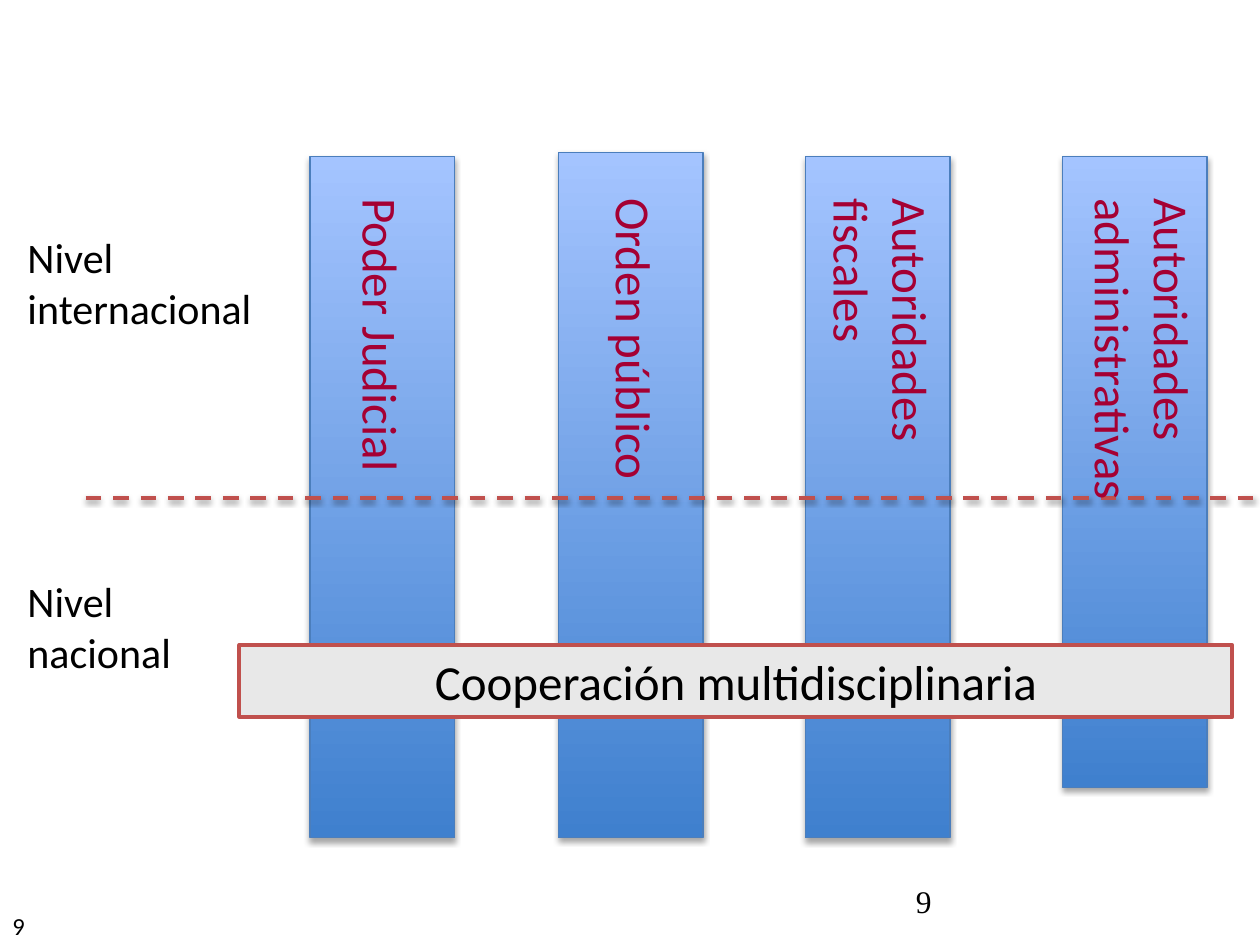
from lxml import etree
from pptx import Presentation
from pptx.dml.color import RGBColor
from pptx.enum.dml import MSO_LINE
from pptx.enum.shapes import MSO_CONNECTOR, MSO_SHAPE
from pptx.enum.text import MSO_ANCHOR, PP_ALIGN
from pptx.oxml import parse_xml
from pptx.oxml.ns import nsdecls
from pptx.util import Inches, Pt

BLACK = RGBColor(0x00, 0x00, 0x00)
CRIMSON = RGBColor(0xA5, 0x00, 0x33)
RED = RGBColor(0xC0, 0x50, 0x4D)
GREY = RGBColor(0xE8, 0xE8, 0xE8)
DARK_BLUE = RGBColor(0x3F, 0x80, 0xCE)
LIGHT_BLUE = RGBColor(0xA4, 0xC4, 0xFF)
EDGE_BLUE = RGBColor(0x4B, 0x7E, 0xBC)

deck = Presentation()
deck.slide_width = Inches(10)
deck.slide_height = Inches(7.5)
page = deck.slides.add_slide(deck.slide_layouts[6])


def add_label(text, left, top, width, height, size, color=BLACK, font="Calibri"):
    box = page.shapes.add_textbox(Inches(left), Inches(top), Inches(width), Inches(height))
    box.text_frame.word_wrap = True
    para = box.text_frame.paragraphs[0]
    para.text = text
    para.font.size = Pt(size)
    para.font.name = font
    para.font.color.rgb = color
    return box


def add_shadow(shape, distance, opacity):
    shape._element.spPr.append(parse_xml(
        f'<a:effectLst {nsdecls("a")}>'
        f'<a:outerShdw blurRad="{Pt(3.1)}" dist="{Pt(distance)}" dir="5400000" rotWithShape="0">'
        f'<a:srgbClr val="000000"><a:alpha val="{opacity * 1000}"/></a:srgbClr>'
        '</a:outerShdw></a:effectLst>'))


add_label("9", 0, 7.18, 0.68, 0.34, 14)
add_label("9", 7.17, 6.95, 2.33, 0.4, 18, font="Times New Roman")

pillars = [
    (2.46, 1.24, 5.41),
    (6.39, 1.24, 5.41),
    (4.43, 1.21, 5.44),
    (8.43, 1.24, 5.01),
]
for left, top, height in pillars:
    pillar = page.shapes.add_shape(
        MSO_SHAPE.RECTANGLE, Inches(left), Inches(top), Inches(1.15), Inches(height))
    pillar.fill.gradient()
    pillar.fill.gradient_angle = 90
    for stop, color in zip(pillar.fill.gradient_stops, (DARK_BLUE, LIGHT_BLUE)):
        stop.color.rgb = color
    pillar.line.color.rgb = EDGE_BLUE
    pillar.line.width = Pt(0.75)
    add_shadow(pillar, 1.8, 35)

divider = page.shapes.add_connector(
    MSO_CONNECTOR.STRAIGHT, Inches(0.68), Inches(3.95), Inches(10), Inches(3.95))
divider.line.color.rgb = RED
divider.line.width = Pt(2.25)
divider.line.dash_style = MSO_LINE.DASH
add_shadow(divider, 1.6, 38)

add_label("Nivel nacional", 0.12, 4.52, 1.74, 0.91, 24)
add_label("Nivel internacional", 0.12, 1.79, 2.43, 0.91, 24)

pillar_names = [
    ("Poder Judicial", 1.08, 3.14, 3.9, 0.57),
    ("Orden público", 3.45, 2.78, 3.18, 0.57),
    ("Autoridades fiscales", 5.41, 2.55, 3.18, 1.04),
    ("Autoridades administrativas", 7.71, 2.32, 2.73, 1.04),
]
for name, left, top, width, height in pillar_names:
    add_label(name, left, top, width, height, 28, CRIMSON).rotation = 90

banner = add_label("Cooperación multidisciplinaria", 1.9, 5.12, 7.88, 0.57, 28)
banner.fill.solid()
banner.fill.fore_color.rgb = GREY
banner.line.color.rgb = RED
banner.line.width = Pt(2.25)
banner.text_frame.vertical_anchor = MSO_ANCHOR.TOP
banner.text_frame.paragraphs[0].alignment = PP_ALIGN.CENTER

deck.save("out.pptx")
